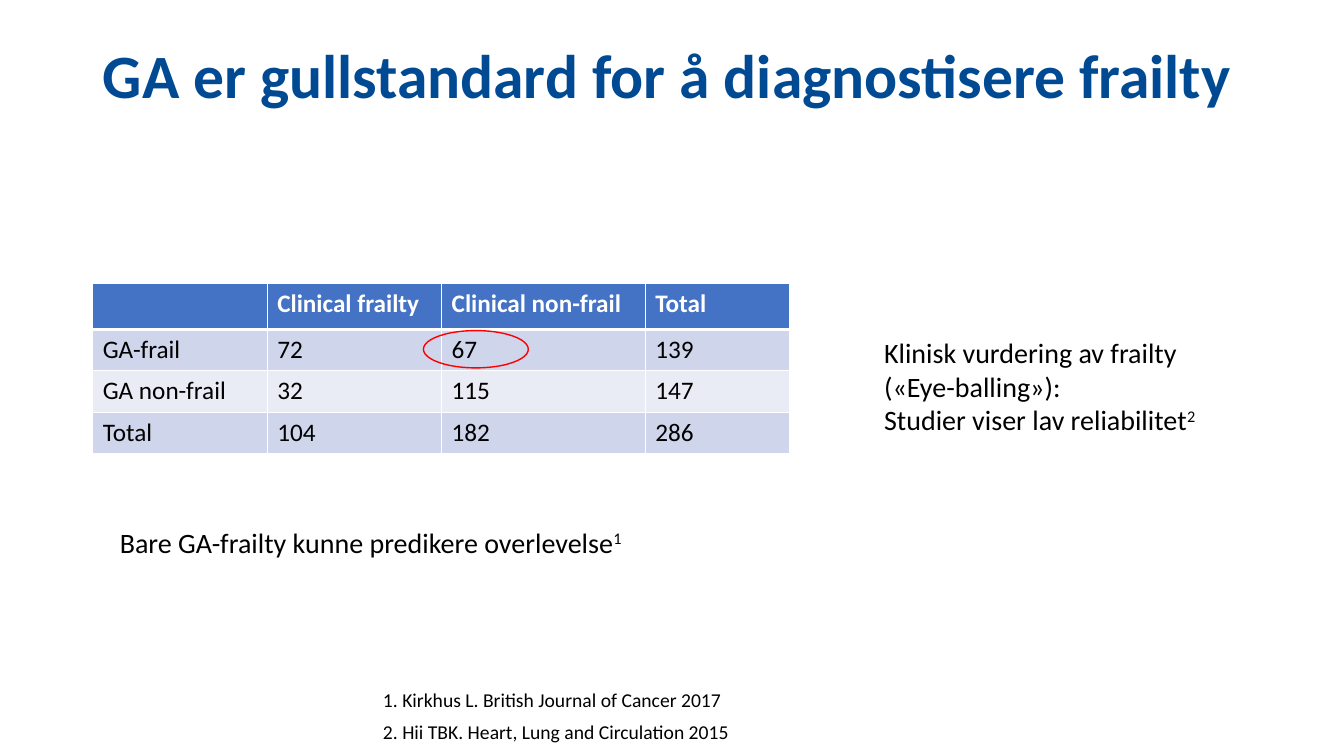
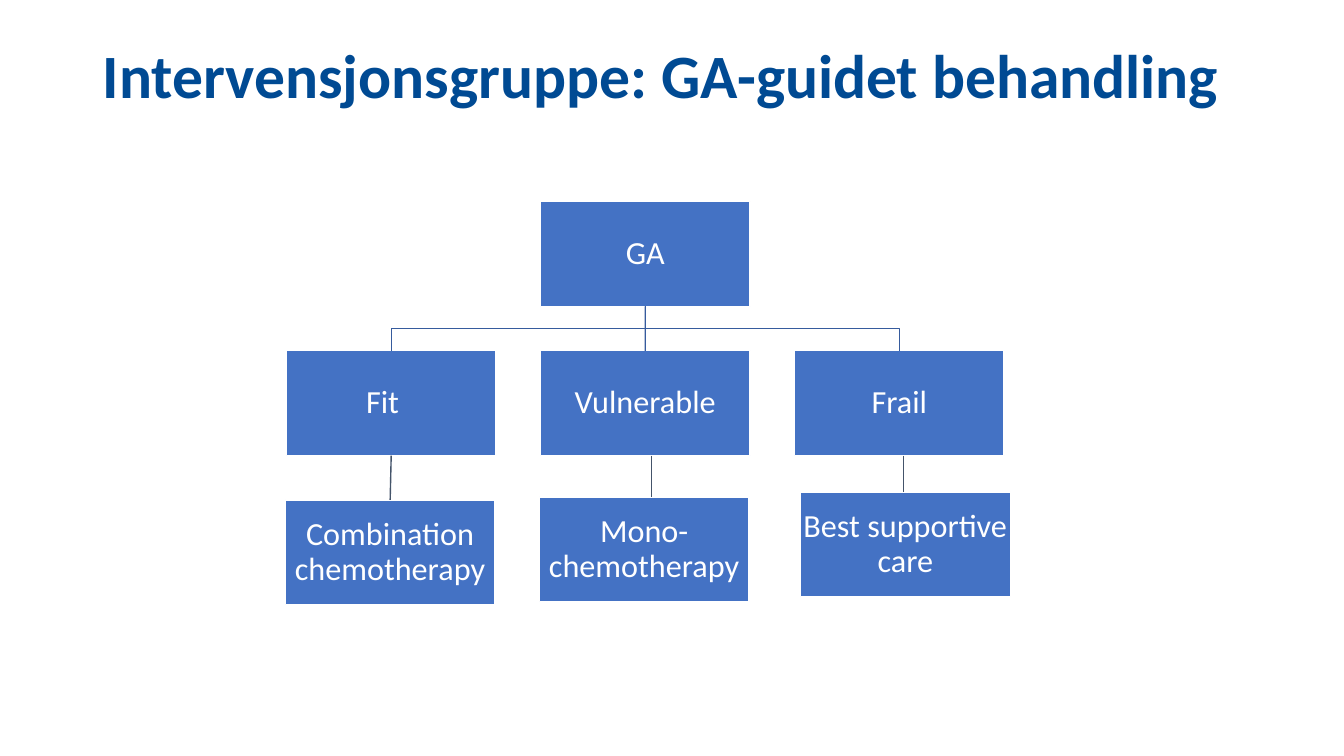
from dataclasses import dataclass

from lxml.etree import SubElement
from pptx import Presentation
from pptx.dml.color import RGBColor
from pptx.enum.shapes import MSO_CONNECTOR as Link, MSO_SHAPE as Shape
from pptx.enum.text import MSO_ANCHOR as Anchor, PP_ALIGN as Align
from pptx.oxml.ns import qn
from pptx.util import Inches, Pt


# Shared look
@dataclass(frozen=True)
class Theme:
    font: str = "Calibri"
    title: str = "004A93"
    main: str = "4472C4"
    band: tuple = ("CFD5EA", "E9EBF5")
    ink: str = "000000"
    paper: str = "FFFFFF"
    mark: str = "FF0000"
    tree: str = "365B9D"
    stem: str = "44546A"
    head_pt: int = 44
    node_pt: int = 23
    body_pt: int = 20
    cell_pt: int = 18
    note_pt: int = 14
    leading: float = 0.9


THEME = Theme()
NODE_W, NODE_H = 2.08, 1.04


def rgb(code):
    return RGBColor.from_string(code)


def box(*lengths):
    return [Inches(n) for n in lengths]


# Text
def add_run(para, text, size, color=THEME.ink, bold=False, sup=False):
    run = para.add_run()
    run.text = text
    font = run.font
    font.name, font.size, font.bold = THEME.font, Pt(size), bold
    font.color.rgb = rgb(color)
    if sup:
        run._r.get_or_add_rPr().set("baseline", "30000")


def add_slide(prs, title):
    slide = prs.slides.add_slide(prs.slide_layouts[5])
    head = slide.shapes.title
    head.left, head.top, head.width, head.height = box(0.92, 0.4, 11.5, 1.45)
    frame = head.text_frame
    frame.vertical_anchor = Anchor.TOP
    para = frame.paragraphs[0]
    para.alignment, para.line_spacing = Align.LEFT, THEME.leading
    add_run(para, title, THEME.head_pt, THEME.title, True)
    return slide


def add_text(slide, place, size, *lines):
    """Each line is a pair: its text and its raised reference mark."""
    frame = slide.shapes.add_textbox(*box(*place)).text_frame
    frame.word_wrap = True
    for i, (text, ref) in enumerate(lines):
        para = frame.add_paragraph() if i else frame.paragraphs[0]
        add_run(para, text, size)
        if ref:
            add_run(para, ref, size, sup=True)


# Table
def set_edges(cell, below):
    props = cell._tc.get_or_add_tcPr()
    for side in "LRTB":
        width = below if side == "B" else 1
        line = SubElement(props, qn(f"a:ln{side}"), w=str(Pt(width)))
        fill = SubElement(line, qn("a:solidFill"))
        SubElement(fill, qn("a:srgbClr"), val=THEME.paper)


def add_grid(slide, left, top, widths, heights, rows):
    place = box(left, top, sum(widths), sum(heights))
    table = slide.shapes.add_table(len(rows), len(widths), *place).table
    for col, width in zip(table.columns, widths):
        col.width = Inches(width)
    for r, texts in enumerate(rows):
        table.rows[r].height = Inches(heights[r])
        head = r == 0
        for c, text in enumerate(texts):
            cell = table.cell(r, c)
            set_edges(cell, 3 if head else 1)
            cell.fill.solid()
            cell.fill.fore_color.rgb = rgb(
                THEME.main if head else THEME.band[(r - 1) % 2])
            if text:
                add_run(cell.text_frame.paragraphs[0], text, THEME.cell_pt,
                        THEME.paper if head else THEME.ink, head)


# Shapes and lines
def add_shape(slide, kind, place, fill, line):
    shape = slide.shapes.add_shape(kind, *box(*place))
    shape.shadow.inherit = False
    if fill:
        shape.fill.solid()
        shape.fill.fore_color.rgb = rgb(fill)
    else:
        shape.fill.background()
    shape.line.color.rgb, shape.line.width = rgb(line), Pt(1)
    return shape


def add_node(slide, left, top, text):
    node = add_shape(slide, Shape.RECTANGLE, (left, top, NODE_W, NODE_H),
                     THEME.main, THEME.paper)
    frame = node.text_frame
    frame.word_wrap, frame.vertical_anchor = True, Anchor.MIDDLE
    frame.margin_left = frame.margin_right = Inches(0.02)
    frame.margin_top = frame.margin_bottom = Inches(0.02)
    para = frame.paragraphs[0]
    para.alignment, para.line_spacing = Align.CENTER, THEME.leading
    add_run(para, text, THEME.node_pt, THEME.paper)
    return node


def add_line(slide, color, x, start, end):
    ends = (x, start, x, end)
    line = slide.shapes.add_connector(Link.STRAIGHT, *ends)
    line.line.color.rgb, line.line.width = rgb(color), Pt(1)
    SubElement(line._element.spPr, qn("a:effectLst"))
    return line


def join(slide, color, upper, lower):
    mid = upper.left + upper.width // 2
    line = add_line(slide, color, mid, upper.top + upper.height, lower.top)
    line.begin_connect(upper, 2)
    line.end_connect(lower, 0)


def add_elbow(slide, upper, lower):
    x, end = (n.left + n.width // 2 for n in (upper, lower))
    y = upper.top + upper.height
    turn = (y + lower.top) // 2
    pen = slide.shapes.build_freeform(x, y)
    pen.add_line_segments([(x, turn), (end, turn), (end, lower.top)], False)
    elbow = pen.convert_to_shape()
    elbow.shadow.inherit = False
    elbow.fill.background()
    elbow.line.color.rgb, elbow.line.width = rgb(THEME.tree), Pt(1)


# Slides
def build_gold(prs):
    slide = add_slide(prs, "GA er gullstandard for å diagnostisere frailty")
    add_grid(slide, 0.92, 2.81, (1.73, 1.73, 2.02, 1.43),
             (0.46, 0.41, 0.41, 0.41), (
                 ("", "Clinical frailty", "Clinical non-frail", "Total"),
                 ("GA-frail", "72", "67", "139"),
                 ("GA non-frail", "32", "115", "147"),
                 ("Total", "104", "182", "286")))
    add_text(slide, (1.09, 5.16, 6.1, 0.44), THEME.body_pt,
             ("Bare GA-frailty kunne predikere overlevelse", "1"))
    add_text(slide, (8.67, 3.28, 3.57, 1.11), THEME.body_pt,
             ("Klinisk vurdering av frailty («Eye-balling»):", ""),
             ("Studier viser lav reliabilitet", "2"))
    cites = ("1. Kirkhus L. British Journal of Cancer 2017",
             "2. Hii TBK. Heart, Lung and Circulation 2015")
    for i, cite in enumerate(cites):
        add_text(slide, (3.7, 6.78 + i * 0.31, 7.46, 0.34), THEME.note_pt,
                 (cite, ""))
    add_shape(slide, Shape.OVAL, (4.2, 3.28, 1.04, 0.37), None, THEME.mark)


def build_tree(prs):
    slide = add_slide(prs, "Intervensjonsgruppe: GA-guidet behandling")
    root = add_node(slide, 5.36, 2, "GA")
    groups = [add_node(slide, 2.84 + i * 2.52, 3.48, text)
              for i, text in enumerate(("Fit\t", "Vulnerable", "Frail"))]
    cares = [add_node(slide, *care) for care in (
        (2.83, 4.96, "Combination chemotherapy"),
        (5.35, 4.93, "Mono- chemotherapy"),
        (7.94, 4.88, "Best supportive care"))]

    # Branches from the root
    fit, mid, frail = groups
    add_elbow(slide, root, fit)
    add_elbow(slide, root, frail)
    join(slide, THEME.tree, root, mid)

    # Stems down to the treatments, two of them off centre
    join(slide, THEME.stem, fit, cares[0])
    for x, group, care in zip((6.46, 8.96), groups[1:], cares[1:]):
        add_line(slide, THEME.stem, Inches(x), group.top + group.height,
                 care.top)


def main():
    prs = Presentation()
    prs.slide_width, prs.slide_height = box(13.33, 7.5)
    build_gold(prs)
    build_tree(prs)
    prs.save("out.pptx")


if __name__ == "__main__":
    main()
